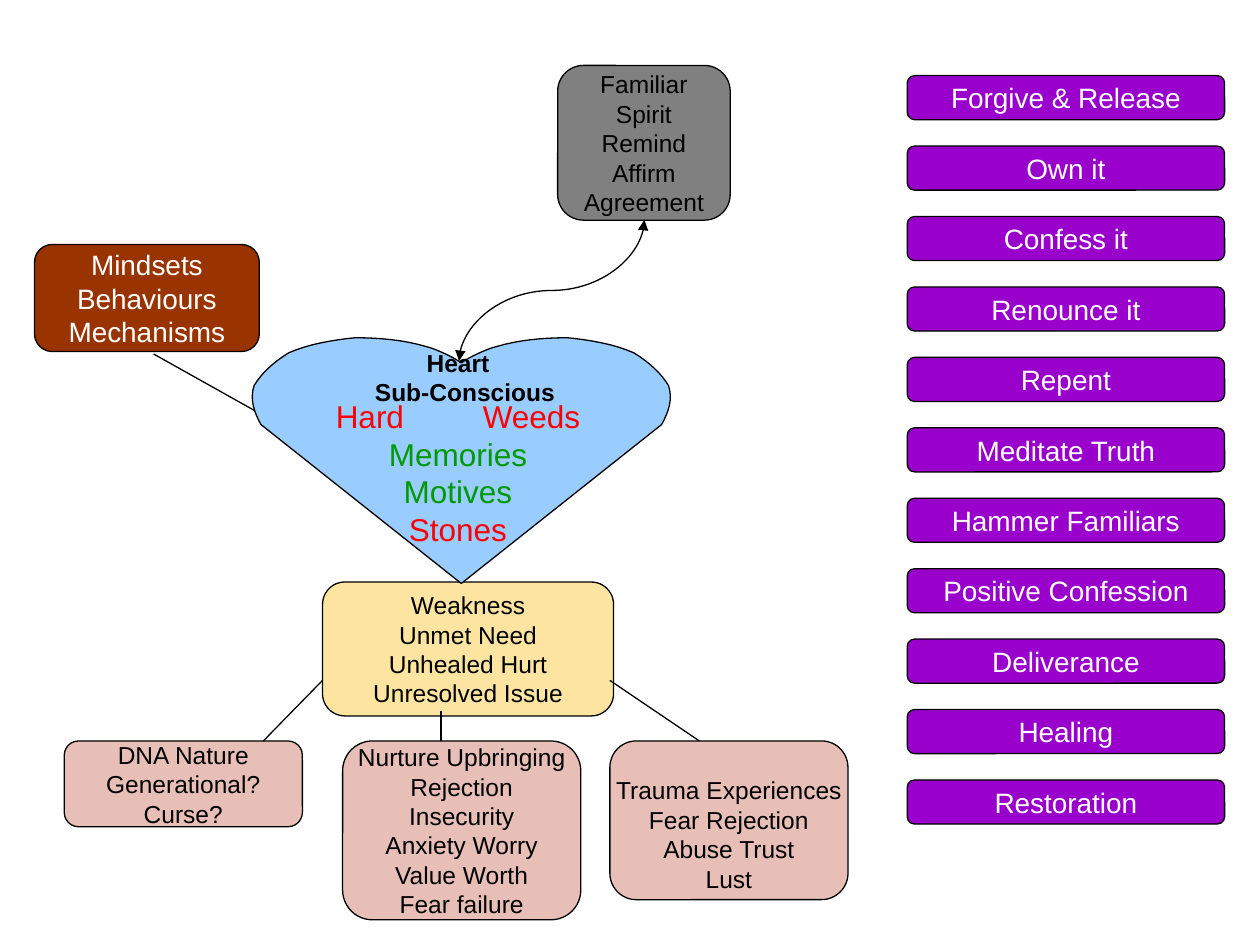
from dataclasses import dataclass

from lxml import etree
from pptx import Presentation
from pptx.dml.color import RGBColor
from pptx.enum.shapes import MSO_CONNECTOR, MSO_SHAPE
from pptx.enum.text import MSO_ANCHOR, MSO_AUTO_SIZE, PP_ALIGN
from pptx.oxml.ns import qn
from pptx.util import Pt

ROUND = MSO_SHAPE.FLOWCHART_ALTERNATE_PROCESS
STRAIGHT, CURVE = MSO_CONNECTOR.STRAIGHT, MSO_CONNECTOR.CURVE
MIDDLE, TOP = MSO_ANCHOR.MIDDLE, MSO_ANCHOR.TOP
GROW, CENTER = MSO_AUTO_SIZE.SHAPE_TO_FIT_TEXT, PP_ALIGN.CENTER

BLACK = RGBColor(0x00, 0x00, 0x00)
WHITE = RGBColor(0xFF, 0xFF, 0xFF)
ROSE = RGBColor(0xE7, 0xBF, 0xB7)
GRAY = RGBColor(0x80, 0x80, 0x80)
CREAM = RGBColor(0xFD, 0xE5, 0xA1)
RUST = RGBColor(0x99, 0x33, 0x00)
SKY = RGBColor(0x99, 0xCC, 0xFF)
PURPLE = RGBColor(0x99, 0x00, 0xCC)
RED = RGBColor(0xFF, 0x00, 0x00)
GREEN = RGBColor(0x00, 0x99, 0x00)


@dataclass
class Box:
    x: float
    y: float
    w: float
    h: float
    fill: RGBColor
    lines: list[str]
    size: int = 14
    ink: RGBColor = BLACK
    inset: float = 0


@dataclass
class Link:
    x1: float
    y1: float
    x2: float
    y2: float
    width: float = 0.75


BOXES = [
    Box(36.7, 423.4, 136.1, 49, ROSE, ["DNA Nature", "Generational?", "Curse?"]),
    Box(195.8, 423.4, 136.1, 102.2, ROSE,
        ["Nurture Upbringing", "Rejection", "Insecurity", "Anxiety Worry",
         "Value Worth", "Fear failure"]),
    Box(348.5, 423.4, 136.1, 90.7, ROSE,
        ["Trauma Experiences", "Fear Rejection", "Abuse Trust", "Lust"], inset=16),
    Box(318.7, 37.4, 98.6, 88.4, GRAY,
        ["Familiar", "Spirit", "Remind", "Affirm", "Agreement"]),
    Box(184.3, 332.6, 166.3, 76.5, CREAM,
        ["Weakness", "Unmet Need", "Unhealed Hurt", "Unresolved Issue"]),
    Box(19.7, 139.7, 128.5, 61.2, RUST,
        ["Mindsets", "Behaviours", "Mechanisms"], 16, WHITE),
]

STEPS = ["Forgive & Release", "Own it", "Confess it", "Renounce it", "Repent",
         "Meditate Truth", "Hammer Familiars", "Positive Confession",
         "Deliverance", "Healing", "Restoration"]
STEP_TOP, STEP_GAP = 43.2, 40.25

LINKS = [
    Link(148.3, 236.2, 87.8, 202.3),
    Link(184.3, 388.8, 150.5, 423.4),
    Link(348.5, 388.8, 399.6, 423.4),
    Link(252, 406.1, 252, 423.4, 1),
]

# Half of the heart: offsets from its axis, as Bezier controls and ends
AXIS, TIP = 263.6, 333.4
NOTCH = (0, 207.4)
LOBE = [
    ((3.6, 204.5), (14.4, 199.4), (20.2, 198)),
    ((32.4, 194.4), (46.1, 193), (60.8, 193)),
    ((74.2, 194.4), (87.1, 196.6), (98.6, 201.6)),
    ((108, 207.4), (114.5, 213.8), (118.4, 220.3)),
    ((121, 228.2), (118.4, 235.4), (114.5, 242.6)),
]


def add_run(para, text: str, size: int, ink: RGBColor, bold: bool = False):
    run = para.add_run()
    run.text = text
    font = run.font
    font.name, font.size, font.bold = "Arial", Pt(size), bold
    font.color.rgb = ink
    return run


def set_frame(frame, wrap: bool, anchor, inset: float = 0) -> None:
    frame.margin_left = frame.margin_right = frame.margin_bottom = 0
    frame.margin_top = Pt(inset)
    frame.word_wrap, frame.vertical_anchor = wrap, anchor


def next_para(frame, first: bool):
    para = frame.paragraphs[0] if first else frame.add_paragraph()
    para.alignment = CENTER
    return para


def paint(shape, fill: RGBColor) -> None:
    shape.shadow.inherit = False
    shape.fill.solid()
    shape.fill.fore_color.rgb = fill
    shape.line.color.rgb = BLACK
    shape.line.width = Pt(0.75)


def draw_box(shapes, box: Box) -> None:
    shape = shapes.add_shape(ROUND, Pt(box.x), Pt(box.y), Pt(box.w), Pt(box.h))
    paint(shape, box.fill)
    frame = shape.text_frame
    set_frame(frame, False, MIDDLE, box.inset)
    for i, line in enumerate(box.lines):
        add_run(next_para(frame, i == 0), line, box.size, box.ink)


def draw_link(shapes, link: Link, kind=STRAIGHT):
    line = shapes.add_connector(
        kind, Pt(link.x1), Pt(link.y1), Pt(link.x2), Pt(link.y2))
    line.line.color.rgb = BLACK
    line.line.width = Pt(link.width)
    etree.SubElement(line.element.spPr, qn("a:effectLst"))
    return line


def draw_curve(shapes) -> None:
    # Turned a quarter left, so it runs from the heart up to the spirit box
    props = draw_link(shapes, Link(275, 113, 355.6, 218.9), CURVE).element.spPr
    props.find(qn("a:xfrm")).set("rot", "16200000")
    for end in ("a:headEnd", "a:tailEnd"):
        etree.SubElement(props.find(qn("a:ln")), qn(end), type="triangle")


def trace_lobe(parts: int = 8) -> list[tuple[float, float]]:
    pts = [NOTCH]
    for a, b, c in LOBE:
        start = pts[-1]
        for i in range(1, parts + 1):
            t = i / parts
            u = 1 - t
            pts.append(tuple(
                u**3 * p + 3 * u * u * t * q + 3 * u * t * t * r + t**3 * s
                for p, q, r, s in zip(start, a, b, c)))
    return pts


def draw_heart(shapes) -> None:
    lobe = trace_lobe()
    left = [(AXIS - x, y) for x, y in lobe]
    right = [(AXIS + x, y) for x, y in reversed(lobe[1:])]
    pts = [(Pt(x), Pt(y)) for x, y in left + [(AXIS, TIP)] + right]
    pen = shapes.build_freeform(*pts[0])
    pen.add_line_segments(pts[1:], close=True)
    paint(pen.convert_to_shape(), SKY)


def add_label(shapes, y: float, h: float):
    label = shapes.add_textbox(Pt(187.9), Pt(y), Pt(147.6), Pt(h))
    set_frame(label.text_frame, True, TOP)
    label.text_frame.auto_size = GROW
    return label.text_frame


def write_heart(shapes) -> None:
    # Heading, with its second line set slightly to the right
    frame = add_label(shapes, 198.7, 33.8)
    add_run(next_para(frame, True), "Heart", 14, BLACK, True)
    para = next_para(frame, False)
    add_run(para, "Sub-Conscious", 14, BLACK, True)
    para._p.get_or_add_pPr().set("marL", str(Pt(8)))

    # Contents: one widely tracked space parts the first two words
    frame = add_label(shapes, 226.8, 103)
    para = next_para(frame, True)
    add_run(para, "Hard", 18, RED)
    gap = add_run(para, " ", 18, RED)
    gap.font._element.set("spc", "4000")
    add_run(para, "Weeds", 18, RED)
    for word, ink in (("Memories", GREEN), ("Motives", GREEN), ("Stones", RED)):
        add_run(next_para(frame, False), word, 18, ink)


def main() -> None:
    deck = Presentation()
    deck.slide_width, deck.slide_height = Pt(720), Pt(540)
    shapes = deck.slides.add_slide(deck.slide_layouts[6]).shapes

    # Causes and effects
    for box in BOXES:
        draw_box(shapes, box)
    draw_curve(shapes)
    for link in LINKS:
        draw_link(shapes, link)

    # Heart
    draw_heart(shapes)
    write_heart(shapes)

    # Steps to freedom
    for i, step in enumerate(STEPS):
        top = STEP_TOP + i * STEP_GAP
        draw_box(shapes, Box(518.4, top, 181.4, 25.2, PURPLE, [step], 16, WHITE))

    deck.save("out.pptx")


if __name__ == "__main__":
    main()
